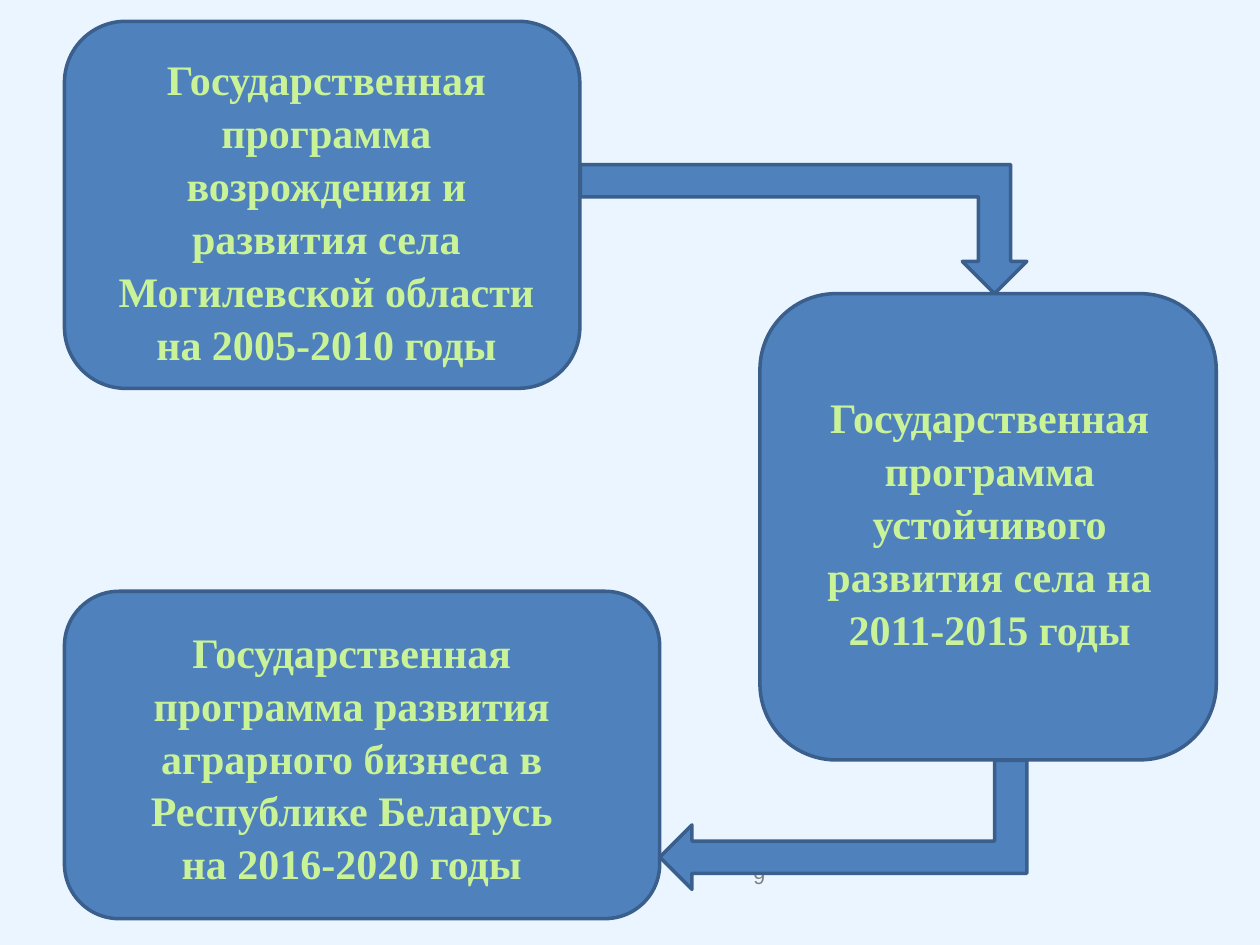
from pptx import Presentation
from pptx.dml.color import RGBColor
from pptx.enum.shapes import MSO_SHAPE as Kind
from pptx.enum.text import MSO_ANCHOR as Anchor, PP_ALIGN as Align
from pptx.util import Cm, Pt

HUES = {"back": "EBF5FF", "fill": "4F81BD", "edge": "3A5F8C",
        "text": "CAF297", "page": "7F7F7F"}
PLANS = [
    ((1.3, 0.43, 10.39, 7.4), (2.08, 0.91, 9, 6.4),
     "Государственная программа возрождения и развития села "
     "Могилевской области на 2005-2010 годы"),
    ((15.32, 5.92, 9.2, 9.4), (16.2, 7.72, 7.5, 5.38),
     "Государственная программа устойчивого развития села на 2011-2015 годы"),
    ((1.3, 11.92, 12, 6.6), (2.29, 12.45, 9.6, 5.38),
     "Государственная программа развития аграрного бизнеса "
     "в Республике Беларусь на 2016-2020 годы"),
]
ARROWS = [((11.7, 3.32, 9, 2.6), "flipV", 0),
          ((15.7, 12.93, 2.6, 7.4), "flipH", 270)]


def hue(name):
    """Return a named colour."""
    return RGBColor.from_string(HUES[name])


def add_block(slide, kind, area):
    """Add a filled and outlined shape."""
    block = slide.shapes.add_shape(kind, *map(Cm, area))
    block.shadow.inherit = False
    block.fill.solid()
    block.fill.fore_color.rgb = hue("fill")
    block.line.color.rgb = hue("edge")
    block.line.width = Pt(2)
    return block


def add_arrow(slide, area, flip, turn):
    """Add a bent arrow, mirrored and turned."""
    arrow = add_block(slide, Kind.BENT_UP_ARROW, area)
    arrow.rotation = turn
    arrow.element.spPr.xfrm.set(flip, "1")


def add_text(slide, area, text, face, size, tint, align, bold=False):
    """Add a wrapped text box and return it."""
    box = slide.shapes.add_textbox(*map(Cm, area))
    frame = box.text_frame
    frame.word_wrap = True
    frame.text = text
    para = frame.paragraphs[0]
    para.alignment = align
    font = para.runs[0].font
    font.name, font.size, font.bold = face, Pt(size), bold
    font.color.rgb = hue(tint)
    return box


def main():
    """Build the slide of three programmes in sequence."""
    deck = Presentation()
    deck.slide_width, deck.slide_height = Cm(25.4), Cm(19.05)
    slide = deck.slides.add_slide(deck.slide_layouts[6])
    slide.background.fill.solid()
    slide.background.fill.fore_color.rgb = hue("back")

    page = add_text(slide, (10.59, 17.15, 5.08, 1.01), "9",
                    "Arial", 12, "page", Align.RIGHT)
    page.text_frame.vertical_anchor = Anchor.MIDDLE
    for area, _, _ in PLANS:
        add_block(slide, Kind.ROUNDED_RECTANGLE, area)
    for area, flip, turn in ARROWS:
        add_arrow(slide, area, flip, turn)
    for _, area, text in PLANS:
        box = add_text(slide, area, text, "Times New Roman", 24,
                       "text", Align.CENTER, True)
        box.text_frame.paragraphs[0].line_spacing = 1.05
    deck.save("out.pptx")


if __name__ == "__main__":
    main()
